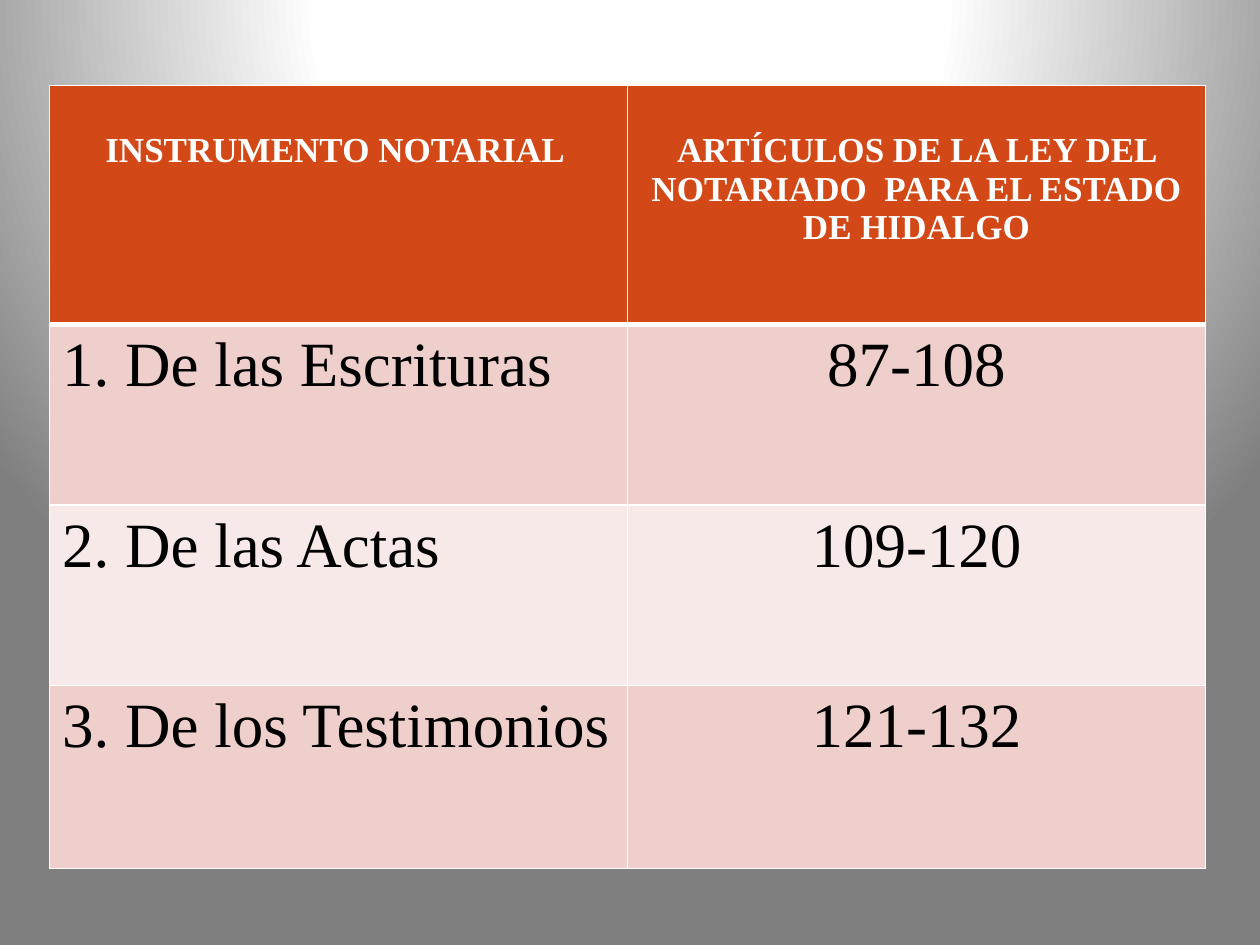
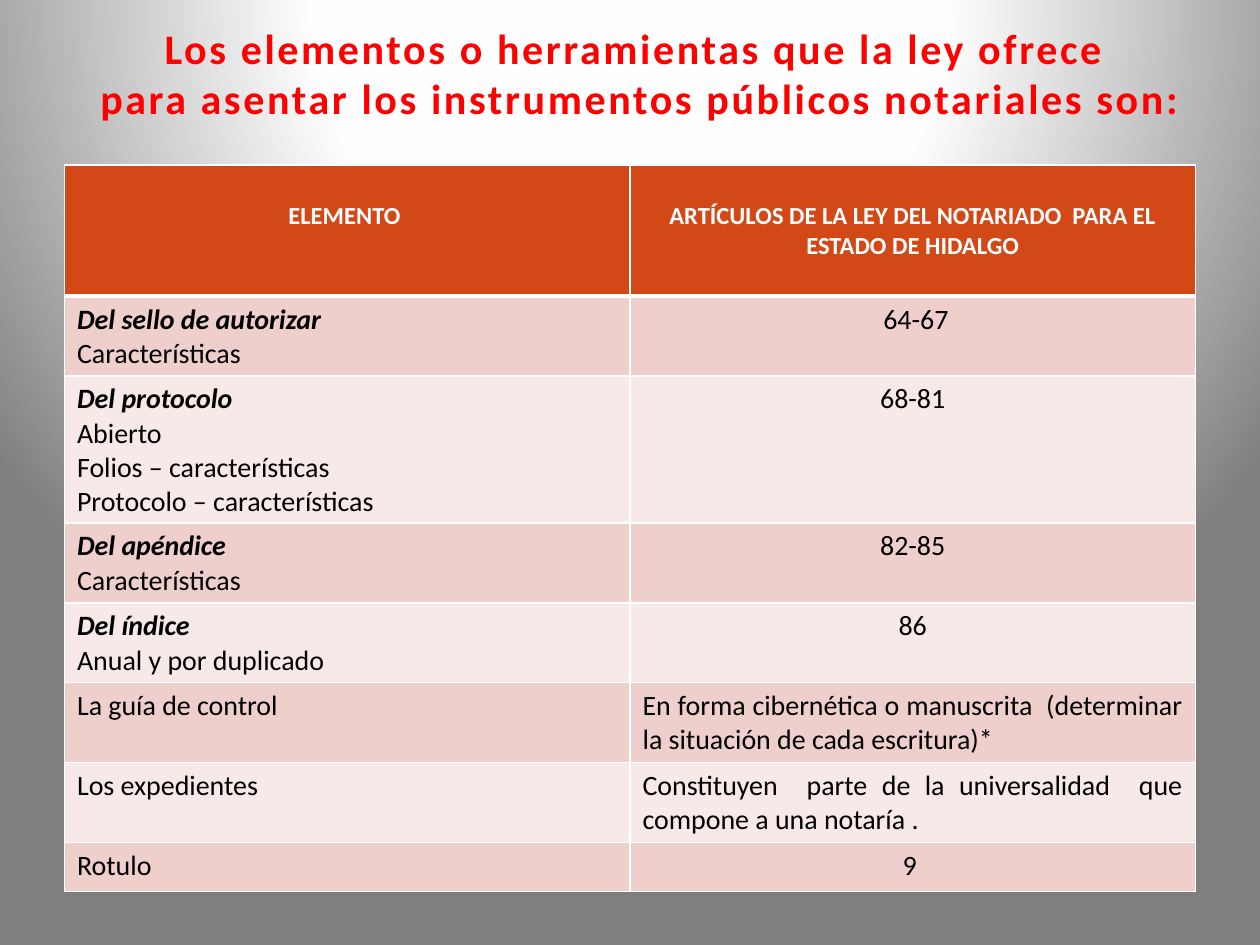
from dataclasses import dataclass

from lxml import etree
from pptx import Presentation
from pptx.dml.color import RGBColor
from pptx.enum.text import PP_ALIGN
from pptx.oxml import parse_xml
from pptx.oxml.ns import nsdecls, qn
from pptx.util import Cm, Pt

LEFT, CENTER, JUSTIFY = PP_ALIGN.LEFT, PP_ALIGN.CENTER, PP_ALIGN.JUSTIFY


@dataclass(frozen=True)
class Theme:
    header: str = "D34817"
    bands: tuple = ("EFCFCC", "F7E9E8")
    white: str = "FFFFFF"
    black: str = "000000"
    title: str = "FF0000"
    glow: tuple = ((0, "FFFFFF"), (40, "FEFEFE"), (100, "7F7F7F"))
    serif: str = "Times New Roman"
    sans: str = "Calibri"
    title_size: int = 24
    instrument_sizes: tuple = (20, 36)
    element_sizes: tuple = (14, 16)
    rule: int = 1
    header_rule: int = 3


theme = Theme()


def add_text(p, text, *, font, size, color, bold=False, italic=False, align=LEFT, spacing=0):
    p.alignment = align
    r = p.add_run()
    r.text = text
    r.font.name = font
    r.font.size = Pt(size)
    r.font.bold = bold
    r.font.italic = italic
    r.font.color.rgb = RGBColor.from_string(color)
    if spacing:
        r._r.get_or_add_rPr().set("spc", str(int(spacing * 100)))


def add_grid(slide, left, top, col_width, heights, rows, font, sizes, header_margin):
    frame = slide.shapes.add_table(len(rows), 2, Cm(left), Cm(top),
                                   Cm(2 * col_width), Cm(sum(heights)))
    table = frame.table
    for col in table.columns:
        col.width = Cm(col_width)
    for i, (row, height) in enumerate(zip(rows, heights)):
        table.rows[i].height = Cm(height)
        is_header = i == 0
        for j, (lines, align) in enumerate(row):
            cell = table.cell(i, j)
            tcPr = cell._tc.get_or_add_tcPr()
            for side in ("lnL", "lnR", "lnT", "lnB"):
                thick = (i, side) in ((0, "lnB"), (1, "lnT"))
                width = theme.header_rule if thick else theme.rule
                ln = etree.SubElement(tcPr, qn(f"a:{side}"), w=str(Pt(width)))
                line_fill = etree.SubElement(ln, qn("a:solidFill"))
                etree.SubElement(line_fill, qn("a:srgbClr"), val=theme.white)
            cell.fill.solid()
            fill = theme.header if is_header else theme.bands[(i - 1) % 2]
            cell.fill.fore_color.rgb = RGBColor.from_string(fill)
            if is_header:
                cell.margin_top = Cm(header_margin)
            tf = cell.text_frame
            for k, line in enumerate(lines):
                p = tf.paragraphs[0] if k == 0 else tf.add_paragraph()
                lead = len(lines) > 1 and k == 0
                add_text(p, line, font=font, size=sizes[0 if is_header else 1],
                         color=theme.white if is_header else theme.black,
                         bold=is_header or lead, italic=lead, align=align)


prs = Presentation()
prs.slide_width, prs.slide_height = Cm(25.4), Cm(19.05)
blank = prs.slide_layouts[6]

master = prs.slide_master
master.background.fill.solid()
solid = master.element.find(".//" + qn("p:bgPr")).find(qn("a:solidFill"))
stops = "".join(f'<a:gs pos="{pos * 1000}"><a:srgbClr val="{color}"/></a:gs>'
                for pos, color in theme.glow)
solid.getparent().replace(solid, parse_xml(
    f'<a:gradFill {nsdecls("a")} rotWithShape="1"><a:gsLst>{stops}</a:gsLst>'
    '<a:path path="circle"><a:fillToRect l="50000" t="-80000" r="50000" b="180000"/>'
    '</a:path></a:gradFill>'))

law_header = (["ARTÍCULOS DE LA LEY DEL NOTARIADO  PARA EL ESTADO DE HIDALGO"], CENTER)

instruments = [
    ((["INSTRUMENTO NOTARIAL "], CENTER), law_header),
    ((["1. De las Escrituras"], LEFT), (["87-108"], CENTER)),
    ((["2. De las Actas"], LEFT), (["109-120"], CENTER)),
    ((["3. De los Testimonios"], LEFT), (["121-132"], CENTER)),
]
slide = prs.slides.add_slide(blank)
add_grid(slide, 1, 1.72, 11.65, [4.82, 3.64, 3.64, 3.69], instruments,
         theme.serif, theme.instrument_sizes, 0.92)

elements = [
    ((["ELEMENTO "], CENTER), law_header),
    ((["Del sello de autorizar", "Características"], LEFT), ([" 64-67"], CENTER)),
    ((["Del protocolo", "Abierto", "Folios – características",
       "Protocolo – características"], LEFT), (["68-81"], CENTER)),
    ((["Del apéndice", "Características"], LEFT), (["82-85"], CENTER)),
    ((["Del índice", "Anual y por duplicado"], LEFT), (["86"], CENTER)),
    ((["La guía de control"], LEFT),
     (["En forma cibernética o manuscrita  (determinar la situación de cada escritura)*"], JUSTIFY)),
    ((["Los expedientes"], LEFT),
     (["Constituyen  parte de la universalidad  que compone a una notaría ."], JUSTIFY)),
    ((["Rotulo"], LEFT), (["9 "], CENTER)),
]
slide = prs.slides.add_slide(blank)
title = slide.shapes.add_textbox(Cm(1.5), Cm(0.33), Cm(22.8), Cm(2.31))
tf = title.text_frame
tf.word_wrap = False
title_lines = ("Los elementos o herramientas que la ley ofrece ",
               "para asentar los instrumentos públicos notariales son:")
for k, line in enumerate(title_lines):
    p = tf.paragraphs[0] if k == 0 else tf.add_paragraph()
    add_text(p, line, font=theme.sans, size=theme.title_size, color=theme.title,
             bold=True, align=CENTER, spacing=1.5)
add_grid(slide, 1.3, 3.33, 11.4, [2.64, 1.6, 2.96] + [1.61] * 4 + [0.99], elements,
         theme.sans, theme.element_sizes, 0.73)

prs.save("out.pptx")
